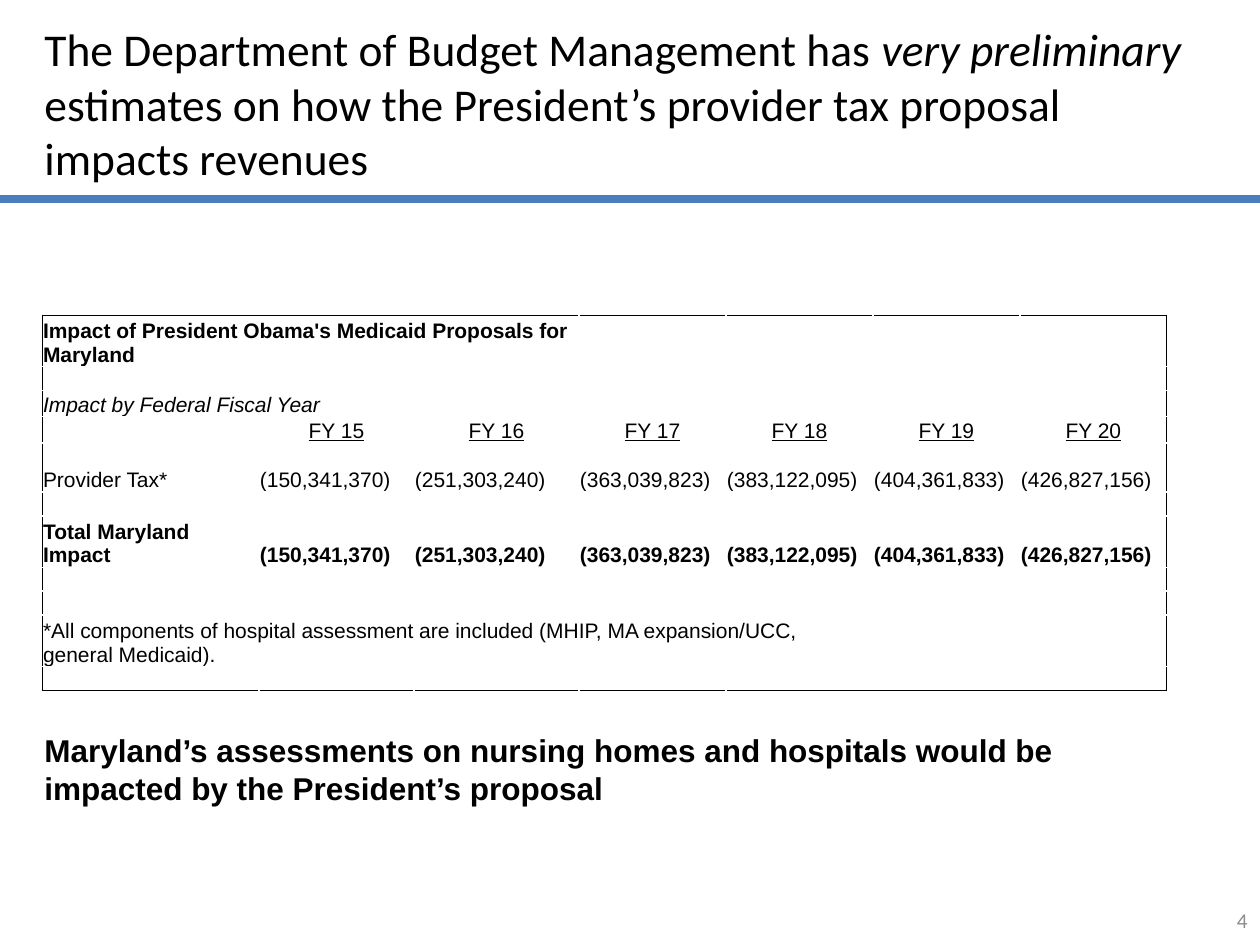
from dataclasses import dataclass

from lxml import etree
from pptx import Presentation
from pptx import util as u
from pptx.dml.color import RGBColor
from pptx.enum import shapes, text
from pptx.oxml.ns import qn


@dataclass(frozen=True)
class Theme:
    ink: str = "000000"
    paper: str = "FFFFFF"
    rule: str = "4B7EBC"
    muted: str = "8C8C8C"
    heading_font: str = "Calibri"
    body_font: str = "Arial"
    title_size: int = 26
    message_size: int = 18
    small_size: int = 12
    blank_size: int = 10


THEME = Theme()
LEFT, CENTER, RIGHT = text.PP_ALIGN.LEFT, text.PP_ALIGN.CENTER, text.PP_ALIGN.RIGHT
TOP, MIDDLE, BOTTOM = (text.MSO_ANCHOR.TOP, text.MSO_ANCHOR.MIDDLE,
                       text.MSO_ANCHOR.BOTTOM)

YEARS = [f"FY {year}" for year in range(15, 21)]
AMOUNTS = ["(150,341,370)", "(251,303,240)", "(363,039,823)",
           "(383,122,095)", "(404,361,833)", "(426,827,156)"]
COL_WIDTHS = [217, 155, 165] + [147] * 4
LINE, DOUBLE = 24, 49
ROW_HEIGHTS = [DOUBLE, LINE, LINE, LINE, DOUBLE, LINE, DOUBLE, LINE, LINE,
               DOUBLE, LINE]


def px(n):
    return u.Emu(round(n * 914400 / 126))


def write(p, content, size=THEME.small_size, font=THEME.body_font,
          color=THEME.ink, align=LEFT, bold=False, italic=False,
          underline=False):
    p.alignment = align
    r = p.add_run()
    r.text = content
    f = r.font
    f.size, f.name = u.Pt(size), font
    f.bold, f.italic, f.underline = bold, italic, underline
    f.color.rgb = RGBColor.from_string(color)


def add_text(s, box, runs, anchor=TOP, **fmt):
    """Add a text box; runs is a list of (text, extra format) pairs."""
    tf = s.shapes.add_textbox(*map(px, box)).text_frame
    tf.word_wrap = True
    tf.vertical_anchor = anchor
    for content, extra in runs:
        write(tf.paragraphs[0], content, **{**fmt, **extra})


def add_rule(s, y, width):
    line = s.shapes.add_connector(shapes.MSO_CONNECTOR.STRAIGHT,
                                  0, px(y), px(width), px(y))
    line.line.color.rgb = RGBColor.from_string(THEME.rule)
    line.line.width = u.Pt(4.5)
    etree.SubElement(line._element.spPr, qn("a:effectLst"))


def set_borders(cell, sides):
    """Draw the named sides, given in schema order L, R, T, B."""
    tc_pr = cell._tc.get_or_add_tcPr()
    for i, side in enumerate(sides):
        ln = etree.Element(qn(f"a:ln{side}"), w=str(u.Pt(0.5)))
        fill = etree.SubElement(ln, qn("a:solidFill"))
        etree.SubElement(fill, qn("a:srgbClr"), val=THEME.ink)
        tc_pr.insert(i, ln)


def style_cell(cell, sides):
    cell.fill.solid()
    cell.fill.fore_color.rgb = RGBColor.from_string(THEME.paper)
    cell.margin_left = cell.margin_right = cell.margin_top = px(1)
    cell.margin_bottom = 0
    cell.vertical_anchor = BOTTOM
    set_borders(cell, sides)
    # Empty cells must not push their row beyond its height.
    etree.SubElement(cell.text_frame.paragraphs[0]._p, qn("a:endParaRPr"),
                     sz=str(THEME.blank_size * 100))


def fill_row(table, row, contents, first_col=0, **fmt):
    for col, content in enumerate(contents, first_col):
        write(table.cell(row, col).text_frame.paragraphs[0], content, **fmt)


def add_impact_table(s, left, top):
    n_rows, n_cols = len(ROW_HEIGHTS), len(COL_WIDTHS)
    table = s.shapes.add_table(n_rows, n_cols, px(left), px(top),
                               px(sum(COL_WIDTHS)), px(sum(ROW_HEIGHTS))).table
    table.first_row = table.horz_banding = False
    for col, width in zip(table.columns, COL_WIDTHS):
        col.width = px(width)
    for row, height in zip(table.rows, ROW_HEIGHTS):
        row.height = px(height)
    for r in range(n_rows):
        for c in range(n_cols):
            edges = {"L": c == 0, "R": c == n_cols - 1,
                     "T": r == 0, "B": r == n_rows - 1}
            style_cell(table.cell(r, c), [k for k, on in edges.items() if on])
    for row, span in ((0, 3), (2, 2), (9, 5)):
        table.cell(row, 0).merge(table.cell(row, span - 1))

    fill_row(table, 0, ["Impact of President Obama's Medicaid Proposals for Maryland"],
             bold=True)
    fill_row(table, 2, ["Impact by Federal Fiscal Year"], italic=True)
    fill_row(table, 3, YEARS, first_col=1, align=CENTER, underline=True)
    fill_row(table, 4, ["Provider Tax*"] + AMOUNTS)
    fill_row(table, 6, ["Total Maryland Impact"] + AMOUNTS, bold=True)
    fill_row(table, 9, ["*All components of hospital assessment are included "
                        "(MHIP, MA expansion/UCC, general Medicaid)."])


def main():
    prs = Presentation()
    prs.slide_width, prs.slide_height = px(1260), px(945)
    s = prs.slides.add_slide(prs.slide_layouts[6])

    add_text(s, (966, 895, 294, 50), [("4", {})], anchor=MIDDLE, align=RIGHT,
             font=THEME.heading_font, color=THEME.muted)
    add_rule(s, 199, 1260)
    add_text(s, (32, 59, 1176, 88),
             [("The Department of Budget Management has ", {}),
              ("very preliminary ", {"italic": True}),
              ("estimates on how the President’s provider tax proposal "
               "impacts revenues", {})],
             anchor=MIDDLE, font=THEME.heading_font, size=THEME.title_size)
    add_impact_table(s, 42, 315)
    add_text(s, (32, 725, 1166, 89),
             [("Maryland’s assessments on nursing homes and hospitals would be "
               "impacted by the President’s proposal", {})],
             size=THEME.message_size, bold=True)
    prs.save("out.pptx")


if __name__ == "__main__":
    main()
